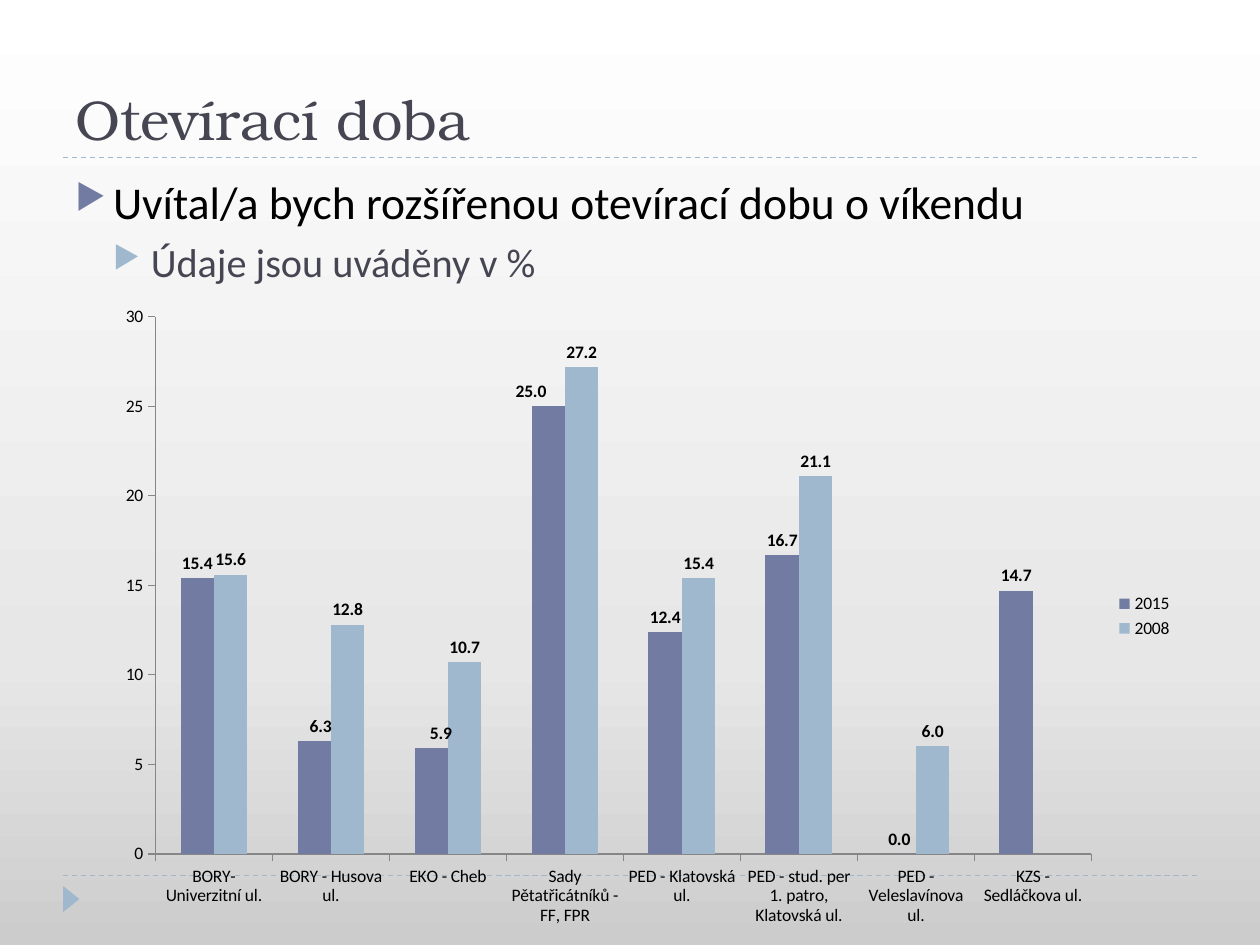
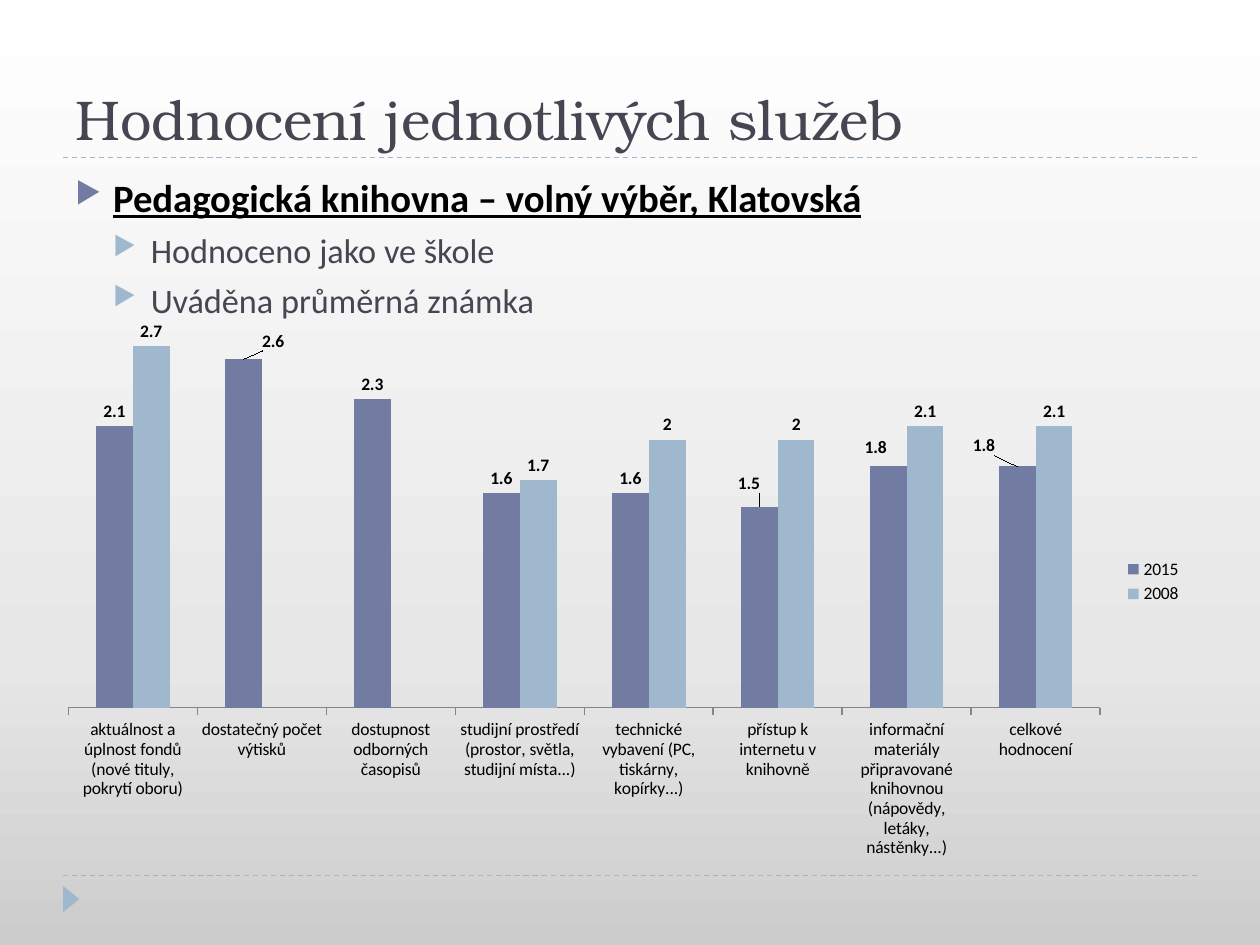
from copy import deepcopy

from lxml import etree
from pptx import Presentation
from pptx import util as u
from pptx.chart.data import CategoryChartData
from pptx.dml.color import RGBColor
from pptx.enum import chart as ch, dml, shapes, text
from pptx.oxml import parse_xml
from pptx.oxml.ns import nsdecls, qn

Cm = u.Cm
HUE = {
    "ink": "000000", "title": "464653", "main": "727CA3", "soft": "9FB8CD",
    "axis": "868686", "low": "CCCCCC", "mid": "E7E7E7", "top": "FFFFFF",
}
FADE = [(0, "low"), (0.3, "mid"), (1, "top")]
BODY, HEAD = "Calibri", "TeX Gyre Bonum"
WIDE, HIGH, EDGE = 25.4, 19.05, 1.27
RULES = (3.18, 17.65)
LEVELS = [(0.76, 6, "main", "ink"), (1.52, 5, "soft", "title")]


def rgb(name):
    return RGBColor.from_string(HUE[name])


def style(font, size, hue="ink", face=BODY, bold=False, line=False):
    font.size, font.name, font.bold = u.Pt(size), face, bold
    font.underline = line
    font.color.rgb = rgb(hue)


def write(para, words, **look):
    run = para.add_run()
    run.text = words
    style(run.font, **look)


def frame(slide, box, anchor):
    area = slide.shapes.add_textbox(*map(Cm, box)).text_frame
    area.word_wrap = True
    area.vertical_anchor = anchor
    return area


def bullet(para, level):
    left, gap, mark, _ = LEVELS[level]
    para.space_before = u.Pt(gap)
    prop = para._p.get_or_add_pPr()
    prop.set("marL", str(Cm(left)))
    prop.set("indent", str(-Cm(LEVELS[0][0])))
    tint = etree.SubElement(prop, qn("a:buClr"))
    etree.SubElement(tint, qn("a:srgbClr"), val=HUE[mark])
    etree.SubElement(prop, qn("a:buSzPct"), val="76000")
    etree.SubElement(prop, qn("a:buChar"), char="▶")


def paint(slide):
    fill = slide.background.fill
    fill.gradient()
    fill.gradient_angle = 90
    first = fill.gradient_stops[0]._gs
    first.addnext(deepcopy(first))
    for stop, (spot, hue) in zip(fill.gradient_stops, FADE):
        stop.position = spot
        stop.color.rgb = rgb(hue)


def rule(slide, y):
    line = slide.shapes.add_connector(
        shapes.MSO_CONNECTOR.STRAIGHT, Cm(EDGE), Cm(y), Cm(WIDE - EDGE), Cm(y))
    line.line.color.rgb = rgb("soft")
    line.line.width = u.Pt(0.75)
    line.line.dash_style = dml.MSO_LINE.DASH
    etree.SubElement(line._element.spPr, qn("a:effectLst"))


def base(prs, title):
    slide = prs.slides.add_slide(prs.slide_layouts[6])
    paint(slide)
    for y in RULES:
        rule(slide, y)
    mark = slide.shapes.add_shape(
        shapes.MSO_SHAPE.ISOSCELES_TRIANGLE, Cm(1.17), Cm(17.96), Cm(0.53), Cm(0.33))
    mark.rotation = 90
    mark.shadow.inherit = False
    mark.fill.solid()
    mark.fill.fore_color.rgb = rgb("soft")
    mark.line.fill.background()
    area = frame(slide, (EDGE, 0.64, WIDE - 2 * EDGE, 2.54), text.MSO_ANCHOR.BOTTOM)
    write(area.paragraphs[0], title, size=32, hue="title", face=HEAD)
    return slide


def points(slide, box, rows, sizes, strong=False):
    area = frame(slide, box, text.MSO_ANCHOR.TOP)
    for i, (level, words) in enumerate(rows):
        para = area.add_paragraph() if i else area.paragraphs[0]
        bullet(para, level)
        bold = strong and level == 0
        write(para, words, size=sizes[level], hue=LEVELS[level][3], bold=bold, line=bold)


def place(x, y, extra=""):
    return (f'<c:layout {nsdecls("c")}><c:manualLayout>{extra}'
            f'<c:x val="{x}"/><c:y val="{y}"/></c:manualLayout></c:layout>')


def fit(chart, x, y, w, h):
    lay = parse_xml(place(x, y, '<c:layoutTarget val="inner"/>'
                          '<c:xMode val="edge"/><c:yMode val="edge"/>'))
    for tag, size in (("c:w", w), ("c:h", h)):
        etree.SubElement(lay[0], qn(tag), val=str(size))
    plot = chart._chartSpace.chart.plotArea
    for old in plot.findall(qn("c:layout")):
        plot.remove(old)
    plot.insert(0, lay)


def shift(labels, moves):
    root = labels._element
    for spot, (i, (x, y)) in enumerate(moves.items()):
        item = parse_xml(
            f'<c:dLbl {nsdecls("c")}><c:idx val="{i}"/>{place(x, y)}'
            '<c:dLblPos val="outEnd"/><c:showLegendKey val="0"/><c:showVal val="1"/>'
            '<c:showCatName val="0"/><c:showSerName val="0"/>'
            '<c:showPercent val="0"/><c:showBubbleSize val="0"/></c:dLbl>')
        for j, tag in enumerate(("c:numFmt", "c:txPr")):
            item.insert(2 + j, deepcopy(root.find(qn(tag))))
        root.insert(spot, item)


def bars(slide, box, cats, data, plot, peak, form, moves, scale=True):
    feed = CategoryChartData()
    feed.categories = cats
    for name, vals in data.items():
        feed.add_series(name, vals)
    chart = slide.shapes.add_chart(
        ch.XL_CHART_TYPE.COLUMN_CLUSTERED, *map(Cm, box), feed).chart
    style(chart.font, 10)
    chart.has_title = False
    chart.has_legend = True
    chart.legend.position = ch.XL_LEGEND_POSITION.RIGHT
    chart.legend.include_in_layout = False
    fit(chart, *plot)
    for axis in (chart.category_axis, chart.value_axis):
        axis.has_major_gridlines = False
        axis.major_tick_mark = ch.XL_TICK_MARK.OUTSIDE
        axis.format.line.color.rgb = rgb("axis")
    axis = chart.value_axis
    axis.minimum_scale, axis.maximum_scale = 0, peak
    axis.visible = scale
    axis.tick_labels.number_format = "0"
    axis.tick_labels.number_format_is_linked = False
    group = chart.plots[0]
    group.gap_width, group.overlap = 150, 0
    group.vary_by_categories = False
    for row, hue in zip(group.series, ("main", "soft")):
        row.format.fill.solid()
        row.format.fill.fore_color.rgb = rgb(hue)
        row.invert_if_negative = False
        labels = row.data_labels
        labels.show_value = True
        labels.number_format = form
        labels.number_format_is_linked = False
        labels.position = ch.XL_LABEL_POSITION.OUTSIDE_END
        style(labels.font, 10, bold=True)
    shift(group.series[0].data_labels, moves)


def hours(prs):
    slide = base(prs, "Otevírací doba")
    points(slide, (EDGE, 3.38, 22.83, 2.54), [
        (0, "Uvítal/a bych rozšířenou otevírací dobu o víkendu"),
        (1, "Údaje jsou uváděny v %"),
    ], (26, 23))
    cats = ["BORY- Univerzitní ul.", "BORY - Husova ul.", "EKO - Cheb",
            "Sady Pětatřicátníků - FF, FPR", "PED - Klatovská ul.",
            "PED - stud. per 1. patro, Klatovská ul.",
            "PED - Veleslavínova ul.", "KZS - Sedláčkova ul."]
    data = {"2015": [15.4, 6.3, 5.9, 25, 12.4, 16.7, 0, 14.7],
            "2008": [15.6, 12.8, 10.7, 27.2, 15.4, 21.1, 6, None]}
    bars(slide, (2.11, 5.92, 21.79, 13), cats, data, (0.047, 0.036, 0.866, 0.833),
         30, "0.0", {1: (0.006, 0), 2: (0.009, 0), 3: (-0.016, 0)})


def marks(prs):
    slide = base(prs, "Hodnocení jednotlivých služeb")
    points(slide, (EDGE, 3.38, 23.04, 2.74), [
        (0, "Pedagogická knihovna – volný výběr, Klatovská"),
        (1, "Hodnoceno jako ve škole"),
        (1, "Uváděna průměrná známka"),
    ], (22.1, 19.6), strong=True)
    cats = ["aktuálnost a úplnost fondů (nové tituly, pokrytí oboru)",
            "dostatečný počet výtisků", "dostupnost odborných časopisů",
            "studijní prostředí (prostor, světla, studijní místa...)",
            "technické vybavení (PC, tiskárny, kopírky...)",
            "přístup k internetu v knihovně",
            "informační materiály připravované knihovnou (nápovědy, letáky, nástěnky...)",
            "celkové hodnocení"]
    data = {"2015": [2.1, 2.6, 2.3, 1.6, 1.6, 1.5, 1.8, 1.8],
            "2008": [2.7, None, None, 1.7, 2, 2, 2.1, 2.1]}
    bars(slide, (0.89, 5.92, 23.19, 11.61), cats, data, (0.021, 0.021, 0.897, 0.698),
         3, "General", {1: (0.026, -0.006), 5: (-0.009, -0.015),
                        6: (-0.011, -0.008), 7: (-0.029, -0.01)}, scale=False)


def main():
    prs = Presentation()
    prs.slide_width, prs.slide_height = Cm(WIDE), Cm(HIGH)
    hours(prs)
    marks(prs)
    prs.save("out.pptx")


if __name__ == "__main__":
    main()
